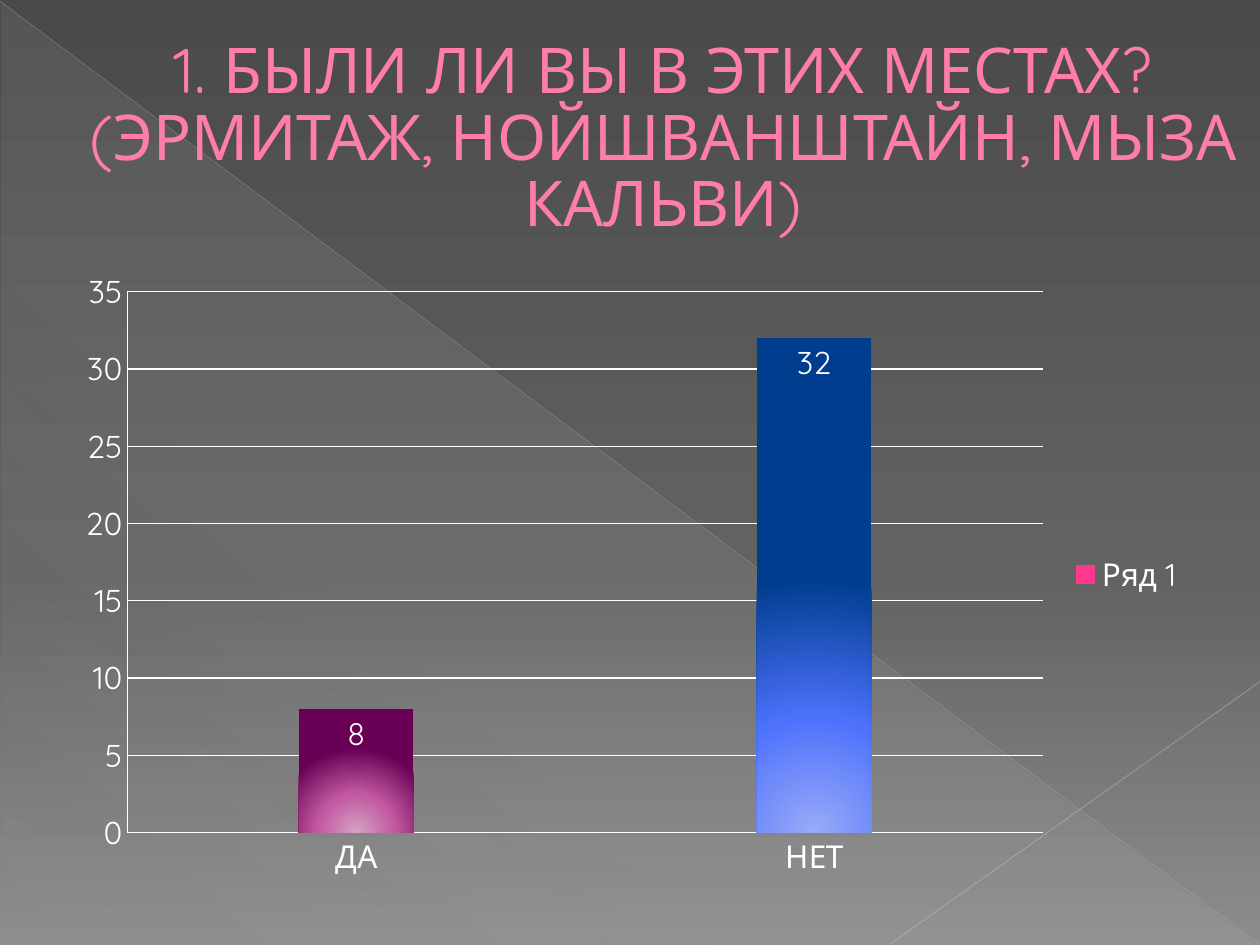
"""Build a survey slide with a gradient backdrop and a two-column chart."""
from dataclasses import dataclass

from lxml.etree import SubElement
from pptx import Presentation
from pptx.chart.data import CategoryChartData
from pptx.dml.color import RGBColor
from pptx.enum.chart import XL_CHART_TYPE, XL_LABEL_POSITION, XL_LEGEND_POSITION, XL_TICK_MARK
from pptx.enum.shapes import MSO_CONNECTOR, MSO_SHAPE
from pptx.enum.text import MSO_ANCHOR, MSO_AUTO_SIZE, PP_ALIGN
from pptx.oxml import parse_xml
from pptx.oxml.ns import nsdecls, qn
from pptx.util import Inches, Pt

TITLE = "1. БЫЛИ ЛИ ВЫ В ЭТИХ МЕСТАХ? (ЭРМИТАЖ, НОЙШВАНШТАЙН, МЫЗА КАЛЬВИ)"
SERIES = "Ряд 1"
ANSWERS = {"ДА": 8, "НЕТ": 32}

WIDTH, HEIGHT = 10, 7.5
TITLE_BOX = (0, 0.29, WIDTH, 2.2)
CHART_BOX = (0.05 * WIDTH, 2.06, 0.9 * WIDTH, 5)
TRIANGLE_BOX = (0.01, 0.02, 9.98, 7.48)
DIAGONALS = [
    ((0, 0.01, 9.99, 7.49), "BFBFBF", 0.39, 35),
    ((10, 5.41, 7.07, 7.49), "C6C6C6", 0.47, 45),
]


@dataclass(frozen=True)
class Theme:
    font: str = "Quicksand"
    title_size: int = 36
    chart_size: int = 18
    title: str = "FF7DA7"
    title_edge: str = "B12761"
    series: str = "FF388C"
    text: str = "FFFFFF"
    backdrop: tuple = ((0, "4A4A4A", 100), (60, "626262", 100), (100, "8C8C8C", 100))
    triangle: tuple = ((0, "D2D2D2", 10), (70, "D2D2D2", 8), (100, "D2D2D2", 1))
    columns: tuple = (
        ((0, "D5A2C3", 100), (46, "C259A1", 100), (100, "690055", 100)),
        ((0, "9AAAF8", 100), (46, "4C71FB", 100), (100, "003D8E", 100)),
    )


THEME = Theme()
GLOW = ('<a:path path="circle"><a:fillToRect l="50000" t="155000" '
        'r="50000" b="-55000"/></a:path>')


def rgb(code):
    return RGBColor.from_string(code)


def linear(angle):
    return f'<a:lin ang="{angle * 60000}" scaled="0"/>'


def paint_gradient(fill, owner, stops, direction):
    fill.solid()
    fill.fore_color.rgb = rgb(stops[0][1])
    solid = next(owner.iter(qn("a:solidFill")))
    stop_xml = "".join(
        f'<a:gs pos="{pos * 1000}"><a:srgbClr val="{color}">'
        f'<a:alpha val="{alpha * 1000}"/></a:srgbClr></a:gs>'
        for pos, color, alpha in stops)
    solid.getparent().replace(solid, parse_xml(
        f'<a:gradFill {nsdecls("a")} rotWithShape="1">'
        f'<a:gsLst>{stop_xml}</a:gsLst>{direction}</a:gradFill>'))


def add_backdrop(slide):
    paint_gradient(slide.background.fill, slide.element, THEME.backdrop, linear(90))
    triangle = slide.shapes.add_shape(
        MSO_SHAPE.RIGHT_TRIANGLE, *map(Inches, TRIANGLE_BOX))
    triangle.shadow.inherit = False
    triangle.line.fill.background()
    paint_gradient(triangle.fill, triangle.element, THEME.triangle, linear(133))
    for ends, color, weight, alpha in DIAGONALS:
        diagonal = slide.shapes.add_connector(MSO_CONNECTOR.STRAIGHT, *map(Inches, ends))
        diagonal.line.width = Pt(weight)
        diagonal.line.color.rgb = rgb(color)
        tint = next(diagonal.element.iter(qn("a:srgbClr")))
        SubElement(tint, qn("a:alpha")).set("val", str(alpha * 1000))
        SubElement(diagonal.element.spPr, qn("a:effectLst"))


def add_title(slide):
    title = slide.shapes.title
    title.left, title.top, title.width, title.height = map(Inches, TITLE_BOX)
    title.element.getparent().append(title.element)
    frame = title.text_frame
    frame.text = TITLE
    frame.word_wrap = True
    frame.auto_size = MSO_AUTO_SIZE.NONE
    frame.vertical_anchor = MSO_ANCHOR.MIDDLE
    frame.margin_bottom = Inches(0.6)
    paragraph = frame.paragraphs[0]
    paragraph.alignment = PP_ALIGN.CENTER
    paragraph.line_spacing = 0.88
    properties = paragraph._p.get_or_add_pPr()
    properties.set("marL", str(Inches(0.53)))
    properties.set("indent", "0")
    font = paragraph.runs[0].font
    font.name, font.size = THEME.font, Pt(THEME.title_size)
    font.color.rgb = rgb(THEME.title)
    font._element.insert(0, parse_xml(
        f'<a:ln {nsdecls("a")} w="{Pt(0.5)}"><a:solidFill>'
        f'<a:srgbClr val="{THEME.title_edge}"/></a:solidFill></a:ln>'))


def add_answers_chart(slide):
    answers = CategoryChartData()
    answers.categories = list(ANSWERS)
    answers.add_series(SERIES, list(ANSWERS.values()))
    chart = slide.shapes.add_chart(
        XL_CHART_TYPE.COLUMN_STACKED, *map(Inches, CHART_BOX), answers).chart
    chart.has_title = False
    chart.font.name, chart.font.size = THEME.font, Pt(THEME.chart_size)
    chart.font.color.rgb = rgb(THEME.text)
    chart.has_legend = True
    chart.legend.position = XL_LEGEND_POSITION.RIGHT
    chart.legend.include_in_layout = False

    for axis in (chart.category_axis, chart.value_axis):
        axis.major_tick_mark = axis.minor_tick_mark = XL_TICK_MARK.NONE
        axis.format.line.color.rgb = rgb(THEME.text)
    chart.value_axis.has_major_gridlines = True
    chart.value_axis.major_gridlines.format.line.color.rgb = rgb(THEME.text)

    plot = chart.plots[0]
    plot.gap_width, plot.overlap = 300, 100
    plot.vary_by_categories = False
    series = plot.series[0]
    series.format.fill.solid()
    series.format.fill.fore_color.rgb = rgb(THEME.series)
    for index, stops in enumerate(THEME.columns):
        column = series.points[index].format
        paint_gradient(column.fill, column._element, stops, GLOW)
    labels = series.data_labels
    labels.show_value = True
    labels.position = XL_LABEL_POSITION.INSIDE_END


def main():
    deck = Presentation()
    deck.slide_width, deck.slide_height = Inches(WIDTH), Inches(HEIGHT)
    slide = deck.slides.add_slide(deck.slide_layouts[5])
    add_backdrop(slide)
    add_title(slide)
    add_answers_chart(slide)
    deck.save("out.pptx")


if __name__ == "__main__":
    main()
